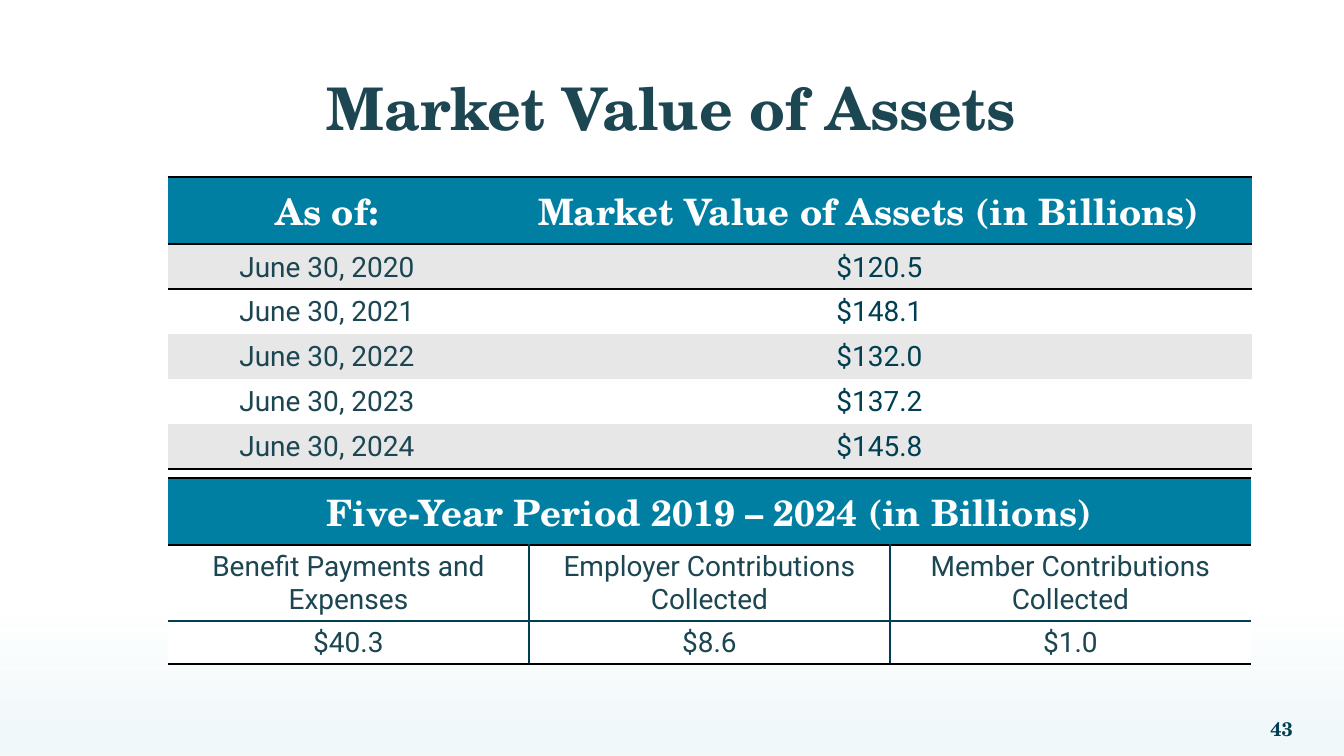
import dataclasses

import pptx
import pptx.dml.color
import pptx.enum.shapes
import pptx.enum.text
import pptx.oxml
import pptx.oxml.ns
import pptx.util

PX_PER_INCH = 100.8
NO_TABLE_STYLE = "{2D5ABB26-0587-4C30-8999-92F81FD0307C}"
ALIGN = pptx.enum.text.PP_ALIGN
ANCHOR = pptx.enum.text.MSO_ANCHOR


@dataclasses.dataclass(frozen=True)
class Theme:
    serif: str = "TeX Gyre Schola"
    sans: str = "Roboto"
    slate: str = "1C4652"
    navy: str = "003E51"
    teal: str = "007FA3"
    mist: str = "CAE5ED"
    band: str = "E7E7E7"
    white: str = "FFFFFF"
    black: str = "000000"
    title_size: int = 42
    header_size: int = 26
    body_size: int = 20
    number_size: int = 14


THEME = Theme()
HEAVY = (THEME.black, 2)
THIN = (THEME.navy, 1)


def px(length):
    return pptx.util.Emu(round(length * 914400 / PX_PER_INCH))


def rgb(color):
    return pptx.dml.color.RGBColor.from_string(color)


def write(frame, text, font, size, color, bold=False, align=ALIGN.CENTER):
    paragraph = frame.paragraphs[0]
    paragraph.text = text
    paragraph.alignment = align
    paragraph.font.name = font
    paragraph.font.size = pptx.util.Pt(size)
    paragraph.font.color.rgb = rgb(color)
    paragraph.font.bold = bold
    return paragraph


def prepare_frame(frame, anchor):
    frame.margin_left = frame.margin_right = 0
    frame.margin_top = frame.margin_bottom = 0
    frame.word_wrap = True
    frame.auto_size = pptx.enum.text.MSO_AUTO_SIZE.NONE
    frame.vertical_anchor = anchor


def add_bottom_fade(slide):
    fade = slide.shapes.add_shape(
        pptx.enum.shapes.MSO_SHAPE.RECTANGLE, px(0), px(613), px(1344), px(143))
    fade.shadow.inherit = False
    fade.line.fill.background()
    fade.fill.gradient()
    fade.fill.gradient_angle = 270
    for stop, position, opacity in zip(fade.fill.gradient_stops, (0, 0.77), (0, 25)):
        stop.position = position
        stop.color.rgb = rgb(THEME.mist)
        # Opacity of this gradient stop
        color = fade.fill._xPr.findall(".//" + pptx.oxml.ns.qn("a:srgbClr"))[-1 if opacity else 0]
        color.append(pptx.oxml.parse_xml(
            f'<a:alpha {pptx.oxml.ns.nsdecls("a")} val="{opacity * 1000}"/>'))


def set_title(slide, text):
    title = slide.shapes.title
    title.left, title.top, title.width, title.height = px(50), px(50), px(1243), px(93)
    prepare_frame(title.text_frame, ANCHOR.BOTTOM)
    paragraph = write(title.text_frame, text, THEME.serif, THEME.title_size, THEME.slate, True)
    paragraph.line_spacing = 0.9


def add_slide_number(slide, text):
    box = slide.shapes.add_textbox(px(1181), px(715), px(112), px(28))
    prepare_frame(box.text_frame, ANCHOR.MIDDLE)
    write(box.text_frame, text, THEME.serif, THEME.number_size, THEME.navy, True, ALIGN.RIGHT)


def add_plain_table(slide, top, columns, rows):
    frame = slide.shapes.add_table(
        len(rows), len(columns), px(168), px(top), px(sum(columns)), px(sum(rows)))
    table = frame.table
    table.first_row = table.horz_banding = False
    table._tbl.tblPr.find(pptx.oxml.ns.qn("a:tableStyleId")).text = NO_TABLE_STYLE
    for column, width in zip(table.columns, columns):
        column.width = px(width)
    for row, height in zip(table.rows, rows):
        row.height = px(height)
    return table


def style_cell(cell, fill, borders):
    """Borders maps L, R, T and B to a color and a width in points."""
    properties = cell._tc.get_or_add_tcPr()
    for side in "LRTB":
        if side in borders:
            color, width = borders[side]
            properties.append(pptx.oxml.parse_xml(
                f'<a:ln{side} {pptx.oxml.ns.nsdecls("a")} w="{pptx.util.Pt(width)}">'
                f'<a:solidFill><a:srgbClr val="{color}"/></a:solidFill></a:ln{side}>'))
    cell.fill.solid()
    cell.fill.fore_color.rgb = rgb(fill)


def write_header(cell, text, anchor):
    cell.vertical_anchor = anchor
    write(cell.text_frame, text, THEME.serif, THEME.header_size, THEME.white, True)


def write_body(cell, text, color=THEME.slate):
    cell.vertical_anchor = ANCHOR.BOTTOM
    write(cell.text_frame, text, THEME.sans, THEME.body_size, color)


def add_market_values(slide, headers, values):
    table = add_plain_table(slide, 177, [318, 766], [67] + [45] * len(values))
    for column, text in enumerate(headers):
        cell = table.cell(0, column)
        style_cell(cell, THEME.teal, {"T": HEAVY, "B": HEAVY})
        write_header(cell, text, ANCHOR.MIDDLE)
    for row, (date, value) in enumerate(values, start=1):
        borders = {}
        if row == 1:
            borders["T"] = HEAVY
        if row == len(values):
            borders["B"] = HEAVY
        date_cell, value_cell = table.cell(row, 0), table.cell(row, 1)
        for cell in (date_cell, value_cell):
            style_cell(cell, THEME.band if row % 2 else THEME.white, borders)
        write_body(date_cell, date)
        write_body(value_cell, value, THEME.navy)
        value_cell.margin_left = px(31)


def add_five_year_flows(slide, heading, flows):
    last = len(flows) - 1
    table = add_plain_table(slide, 478, [361] * len(flows), [67, 76, 42])
    table.cell(0, 0).merge(table.cell(0, last))
    for column, flow in enumerate(flows):
        style_cell(table.cell(0, column), THEME.teal, {"T": HEAVY, "B": HEAVY})
        sides = {}
        if column > 0:
            sides["L"] = THIN
        if column < last:
            sides["R"] = THIN
        edges = ((HEAVY, THIN), (THIN, HEAVY))
        for row, (text, (above, below)) in enumerate(zip(flow, edges), start=1):
            cell = table.cell(row, column)
            style_cell(cell, THEME.white, {**sides, "T": above, "B": below})
            write_body(cell, text)
    write_header(table.cell(0, 0), heading, ANCHOR.BOTTOM)


def main():
    presentation = pptx.Presentation()
    presentation.slide_width, presentation.slide_height = px(1344), px(756)
    slide = presentation.slides.add_slide(presentation.slide_layouts[5])

    # Background, title and page number
    add_bottom_fade(slide)
    set_title(slide, "Market Value of Assets")
    add_slide_number(slide, "43")

    # Yearly market values
    add_market_values(slide, ["As of:", "Market Value of Assets (in Billions)"], [
        ("June 30, 2020", "$120.5"),
        ("June 30, 2021", "$148.1"),
        ("June 30, 2022", "$132.0"),
        ("June 30, 2023", "$137.2"),
        ("June 30, 2024", "$145.8"),
    ])

    # Payments and contributions over five years
    add_five_year_flows(slide, "Five-Year Period 2019 – 2024 (in Billions)", [
        ("Benefit Payments and Expenses", "$40.3"),
        ("Employer Contributions Collected", "$8.6"),
        ("Member Contributions Collected", "$1.0"),
    ])
    presentation.save("out.pptx")


if __name__ == "__main__":
    main()
